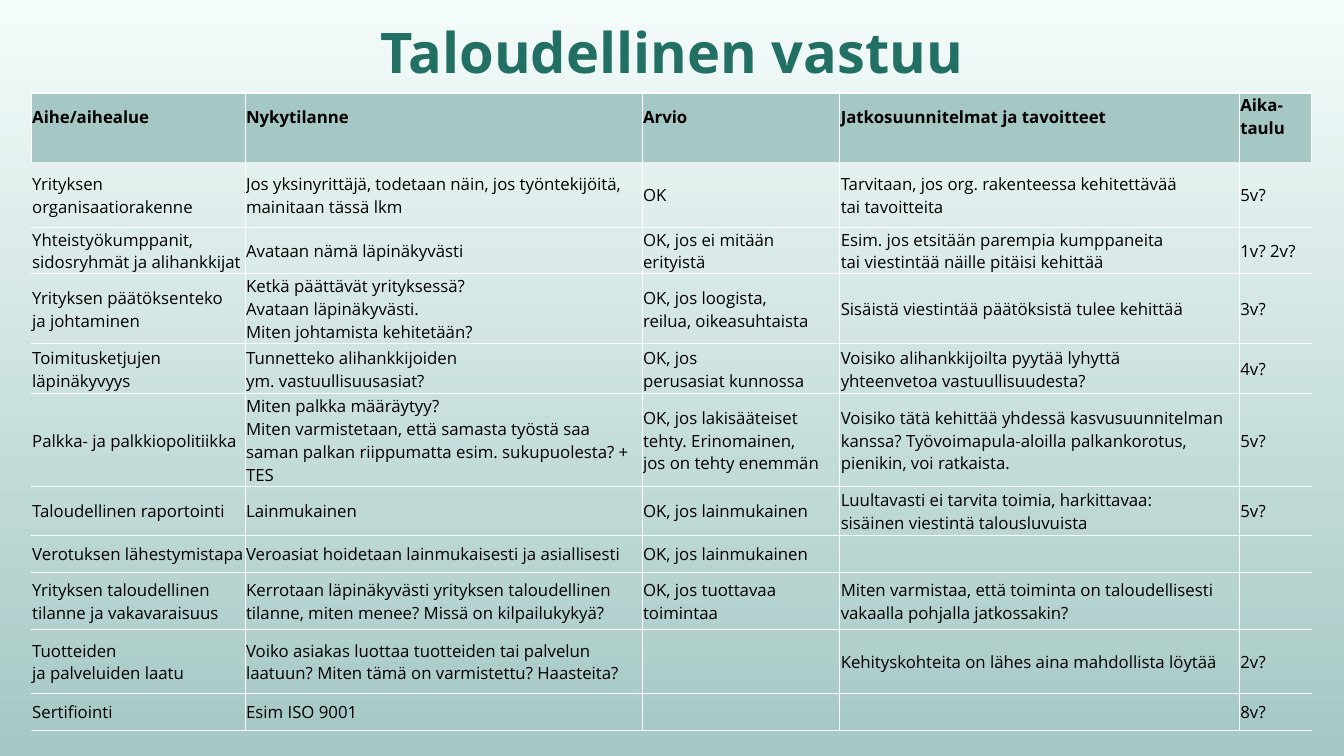
from copy import deepcopy
from dataclasses import dataclass

from lxml.etree import SubElement as Sub
from pptx import Presentation
from pptx.dml.color import RGBColor as Rgb
from pptx.enum.text import MSO_ANCHOR as Anchor, MSO_AUTO_SIZE as Fit, PP_ALIGN as Align
from pptx.oxml.ns import qn
from pptx.util import Pt


@dataclass(frozen=True)
class Theme:
    font: str = "Open Sans"
    head: float = 40
    body: float = 12
    title: str = "226F64"
    ink: str = "000000"
    rule: str = "FFFFFF"
    pale: str = "F4FCFB"
    sage: str = "A5C8C4"


# Each row: height in points, then its cells; \v breaks a line, \n starts a paragraph.
ROWS = [
    (49, "Aihe/aihealue", "Nykytilanne", "Arvio",
     "Jatkosuunnitelmat ja tavoitteet", "Aika-taulu"),
    (46.5, "Yrityksen organisaatiorakenne",
     "Jos yksinyrittäjä, todetaan näin, jos työntekijöitä, mainitaan tässä lkm",
     "OK", "Tarvitaan, jos org. rakenteessa kehitettävää\vtai tavoitteita", "5v?"),
    (32.5, "Yhteistyökumppanit, sidosryhmät ja alihankkijat",
     "Avataan nämä läpinäkyvästi", "OK, jos ei mitään erityistä",
     "Esim. jos etsitään parempia kumppaneita\vtai viestintää näille pitäisi kehittää",
     "1v? 2v?"),
    (48.5, "Yrityksen päätöksenteko\vja johtaminen",
     "Ketkä päättävät yrityksessä?\vAvataan läpinäkyvästi.\nMiten johtamista kehitetään?",
     "OK, jos loogista,\vreilua, oikeasuhtaista",
     "Sisäistä viestintää päätöksistä tulee kehittää", "3v?"),
    (36, "Toimitusketjujen läpinäkyvyys",
     "Tunnetteko alihankkijoiden\vym. vastuullisuusasiat?",
     "OK, jos\vperusasiat kunnossa",
     "Voisiko alihankkijoilta pyytää lyhyttä\vyhteenvetoa vastuullisuudesta?", "4v?"),
    (65.5, "Palkka- ja palkkiopolitiikka",
     "Miten palkka määräytyy?\nMiten varmistetaan, että samasta työstä saa "
     "saman palkan riippumatta esim. sukupuolesta? + TES",
     "OK, jos lakisääteiset tehty. Erinomainen,\vjos on tehty enemmän",
     "Voisiko tätä kehittää yhdessä kasvusuunnitelman kanssa? "
     "Työvoimapula-aloilla palkankorotus, pienikin, voi ratkaista.", "5v?"),
    (35, "Taloudellinen raportointi", "Lainmukainen", "OK, jos lainmukainen",
     "Luultavasti ei tarvita toimia, harkittavaa:\vsisäinen viestintä talousluvuista",
     "5v?"),
    (26.5, "Verotuksen lähestymistapa",
     "Veroasiat hoidetaan lainmukaisesti ja asiallisesti", "OK, jos lainmukainen",
     "", ""),
    (41, "Yrityksen taloudellinen tilanne ja vakavaraisuus",
     "Kerrotaan läpinäkyvästi yrityksen taloudellinen tilanne, miten menee? "
     "Missä on kilpailukykyä?",
     "OK, jos tuottavaa toimintaa",
     "Miten varmistaa, että toiminta on taloudellisesti vakaalla pohjalla jatkossakin?",
     ""),
    (45.5, "Tuotteiden\vja palveluiden laatu",
     "Voiko asiakas luottaa tuotteiden tai palvelun laatuun? "
     "Miten tämä on varmistettu? Haasteita?",
     "", "Kehityskohteita on lähes aina mahdollista löytää", "2v?"),
    (26.5, "Sertifiointi", "Esim ISO 9001", "", "", "8v?"),
]
COLS = [152.8, 283.6, 141.2, 285.4, 51.8]


def put(frame, text, *, font, size, color, bold=False, align=Align.LEFT, gap=1.0):
    frame.text = text
    for para in frame.paragraphs:
        para.alignment, para.line_spacing = align, gap
        for run in para.runs:
            face = run.font
            face.name, face.size, face.bold = font, Pt(size), bold
            face.color.rgb = Rgb.from_string(color)
        # Line breaks take the run format, so they keep its line height.
        for br in para._p.findall(qn("a:br")):
            br.insert(0, deepcopy(para.runs[0]._r.rPr))


class Page:
    def __init__(self, deck, theme):
        self.theme = theme
        self.slide = deck.slides.add_slide(deck.slide_layouts[5])

    def ground(self):
        fill = self.slide.background.fill
        fill.gradient()
        fill.gradient_angle = 270
        for stop, color in zip(fill.gradient_stops, (self.theme.pale, self.theme.sage)):
            stop.color.rgb = Rgb.from_string(color)

    def title(self, text, left, top, width, height):
        box = self.slide.shapes.title
        box.left, box.top, box.width, box.height = map(Pt, (left, top, width, height))
        frame = box.text_frame
        frame.word_wrap, frame.auto_size = True, Fit.NONE
        frame.vertical_anchor = Anchor.BOTTOM
        look = self.theme
        put(frame, text, font=look.font, size=look.head, color=look.title,
            bold=True, align=Align.CENTER, gap=0.9)

    def table(self, rows, cols, left, top):
        high = sum(row[0] for row in rows)
        grid = self.slide.shapes.add_table(
            len(rows), len(cols), Pt(left), Pt(top), Pt(sum(cols)), Pt(high)).table
        grid.horz_banding = False
        for col, width in zip(grid.columns, cols):
            col.width = Pt(width)
        for r, (height, *texts) in enumerate(rows):
            grid.rows[r].height = Pt(height)
            for c, text in enumerate(texts):
                head, last = r == 0, c == len(cols) - 1
                sides = {"L": head or c > 0, "R": head or not last,
                         "T": r != 1, "B": not head}
                self.cell(grid.cell(r, c), text, head, sides)

    def cell(self, cell, text, head, sides):
        look = self.theme
        self.edge(cell, sides)
        if head:
            cell.fill.solid()
            cell.fill.fore_color.rgb = Rgb.from_string(look.sage)
        else:
            cell.fill.background()
        cell.vertical_anchor = Anchor.MIDDLE
        cell.margin_left = cell.margin_right = cell.margin_top = Pt(0.7)
        cell.margin_bottom = Pt(16 if head else 0)
        put(cell.text_frame, text, font=look.font, size=look.body,
            color=look.ink, bold=head)

    def edge(self, cell, sides):
        """Draw the cell borders that are set, and clear the others."""
        props = cell._tc.get_or_add_tcPr()
        for side, shown in sides.items():
            line = Sub(props, qn(f"a:ln{side}"), w=str(Pt(1)))
            if shown:
                fill = Sub(line, qn("a:solidFill"))
                Sub(fill, qn("a:srgbClr"), val=self.theme.rule)
            else:
                Sub(line, qn("a:noFill"))


def main():
    deck = Presentation()
    deck.slide_width, deck.slide_height = Pt(960), Pt(540)
    page = Page(deck, Theme())
    page.ground()
    page.title("Taloudellinen vastuu", 120, 8.5, 720, 56)
    page.table(ROWS, COLS, 22.3, 66.4)
    deck.save("out.pptx")


if __name__ == "__main__":
    main()
